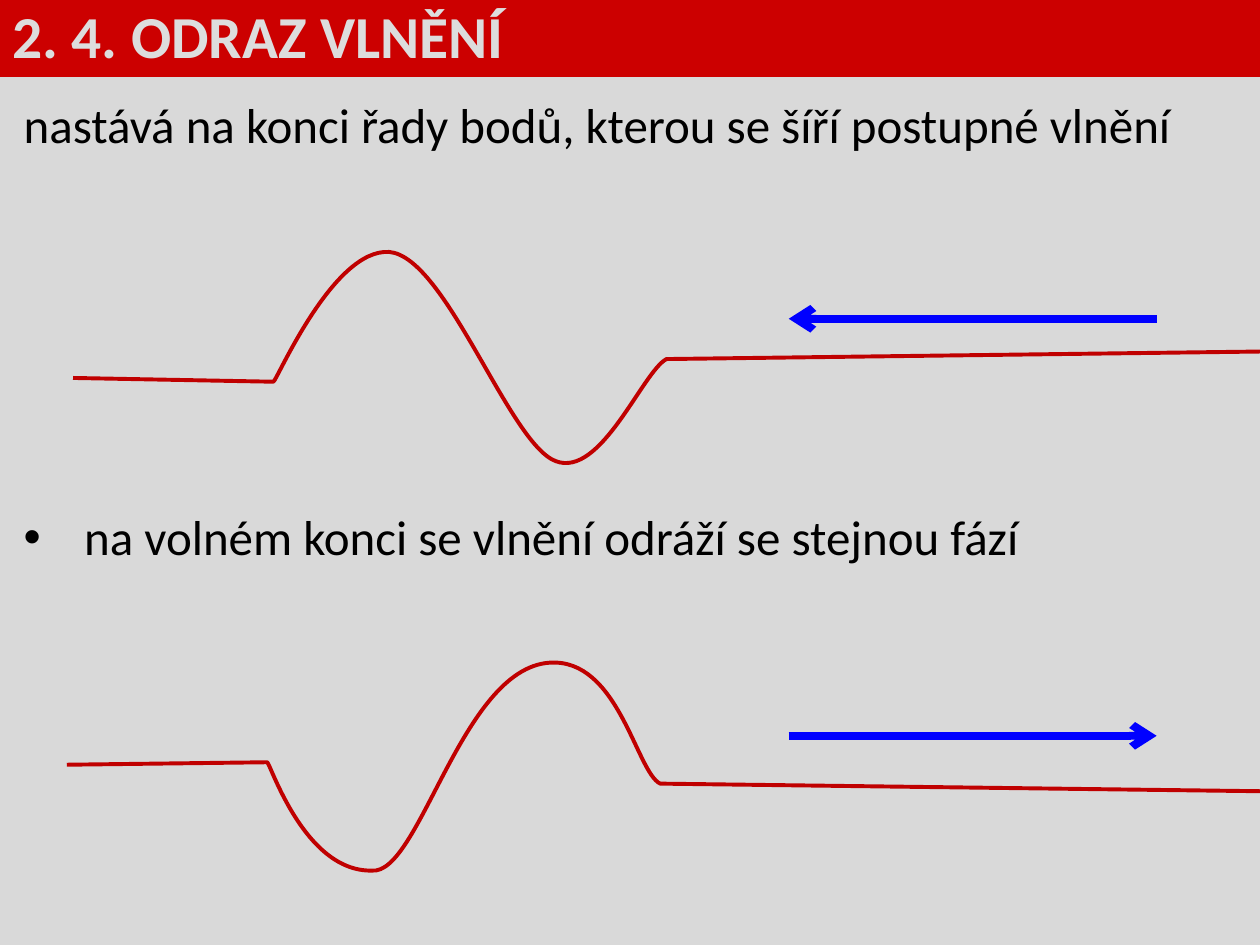
import pptx
import pptx.util
import pptx.dml.color
import pptx.enum.shapes
import pptx.enum.text
import pptx.oxml
import pptx.oxml.ns
from pptx.util import Inches

RGBColor = pptx.dml.color.RGBColor
GREY = RGBColor(0xD9, 0xD9, 0xD9)
BANNER_RED = RGBColor(0xCC, 0x00, 0x00)
TITLE_GREY = RGBColor(0xDD, 0xDD, 0xDD)
BLACK = RGBColor(0x00, 0x00, 0x00)
WAVE_RED = RGBColor(0xC0, 0x00, 0x00)
BLUE = RGBColor(0x00, 0x00, 0xFF)


def write(para, text, *, size, color, bold=False, font="Calibri", before=0):
    para.alignment = pptx.enum.text.PP_ALIGN.LEFT
    para.space_before = pptx.util.Pt(before)
    span = para.add_run()
    span.text = text
    span.font.name = font
    span.font.size = pptx.util.Pt(size)
    span.font.bold = bold
    span.font.color.rgb = color


def drawing_element(tag, attributes=""):
    return pptx.oxml.parse_xml(f'<a:{tag} {pptx.oxml.ns.nsdecls("a")} {attributes}/>')


def add_bullet(para, indent):
    properties = para._p.get_or_add_pPr()
    properties.set("marL", str(Inches(indent)))
    properties.set("indent", str(-Inches(indent)))
    properties.append(drawing_element("buFont", 'typeface="Arial"'))
    properties.append(drawing_element("buChar", 'char="•"'))


def bend_segments(shape):
    """Turn the segments between the first and the last into cubic curves, three to one."""
    segments = list(shape._element.iter(pptx.oxml.ns.qn("a:lnTo")))[1:-1]
    for first in range(0, len(segments), 3):
        curve = drawing_element("cubicBezTo")
        segments[first].addprevious(curve)
        for segment in segments[first:first + 3]:
            curve.append(segment[0])
            segment.getparent().remove(segment)


class WaveSlide:
    def __init__(self, deck):
        self.slide = deck.slides.add_slide(deck.slide_layouts[6])
        self.shapes = self.slide.shapes
        self.slide.background.fill.solid()
        self.slide.background.fill.fore_color.rgb = GREY

    def body(self, left, top, width, height, intro, point):
        box = self.shapes.add_textbox(*map(Inches, (left, top, width, height)))
        frame = box.text_frame
        frame.word_wrap = True
        write(frame.paragraphs[0], intro, size=28, color=BLACK)
        para = frame.add_paragraph()
        add_bullet(para, 0.48)
        write(para, point, size=28, color=BLACK, before=202)

    def banner(self, left, top, width, height, text):
        box = self.shapes.add_shape(pptx.enum.shapes.MSO_SHAPE.RECTANGLE,
                                    *map(Inches, (left, top, width, height)))
        box.shadow.inherit = False
        box.fill.solid()
        box.fill.fore_color.rgb = BANNER_RED
        box.line.fill.background()
        box.text_frame.word_wrap = True
        box.text_frame.vertical_anchor = pptx.enum.text.MSO_ANCHOR.TOP
        write(box.text_frame.paragraphs[0], text, size=34, color=TITLE_GREY, bold=True)

    def wave(self, start, bend, curves, end):
        points = [bend, *(point for curve in curves for point in curve), end]
        builder = self.shapes.build_freeform(*map(Inches, start), scale=1.0)
        builder.add_line_segments([(Inches(x), Inches(y)) for x, y in points], close=False)
        shape = builder.convert_to_shape()
        bend_segments(shape)
        shape.shadow.inherit = False
        shape.fill.background()
        shape.line.color.rgb = WAVE_RED
        shape.line.width = pptx.util.Pt(2.25)

    def arrow(self, start_x, end_x, y):
        line = self.shapes.add_connector(pptx.enum.shapes.MSO_CONNECTOR.STRAIGHT,
                                         *map(Inches, (start_x, y, end_x, y)))
        line.line.color.rgb = BLUE
        line.line.width = pptx.util.Pt(4.5)
        line.line._get_or_add_ln().append(drawing_element("tailEnd", 'type="arrow"'))
        line._element.spPr.append(drawing_element("effectLst"))


def main():
    deck = pptx.Presentation()
    deck.slide_width, deck.slide_height = Inches(10), Inches(7.5)
    page = WaveSlide(deck)

    # Text and heading
    page.body(0.09, 0.7, 10.16, 7.17,
              "nastává na konci řady bodů, kterou se šíří postupné vlnění",
              "na volném konci se vlnění odráží se stejnou fází")
    page.banner(0, -0.06, 10, 0.67, "2. 4. ODRAZ VLNĚNÍ")

    # Incoming and reflected waves
    page.wave((0.58, 3), (2.17, 3.03),
              [((2.19, 3.04), (2.64, 1.97), (3.09, 2)),
               ((3.54, 2.04), (4.04, 3.52), (4.41, 3.66)),
               ((4.77, 3.8), (5.1, 2.95), (5.29, 2.85))], (10.82, 2.78))
    page.wave((0.53, 6.07), (2.12, 6.05),
              [((2.14, 6.04), (2.41, 6.92), (2.95, 6.91)),
               ((3.33, 6.95), (3.66, 5.31), (4.36, 5.26)),
               ((4.91, 5.22), (5.05, 6.13), (5.24, 6.22))], (10.78, 6.29))

    # Directions of travel
    page.arrow(9.18, 6.26, 2.53)
    page.arrow(6.26, 9.18, 5.84)

    deck.save("out.pptx")


if __name__ == "__main__":
    main()
